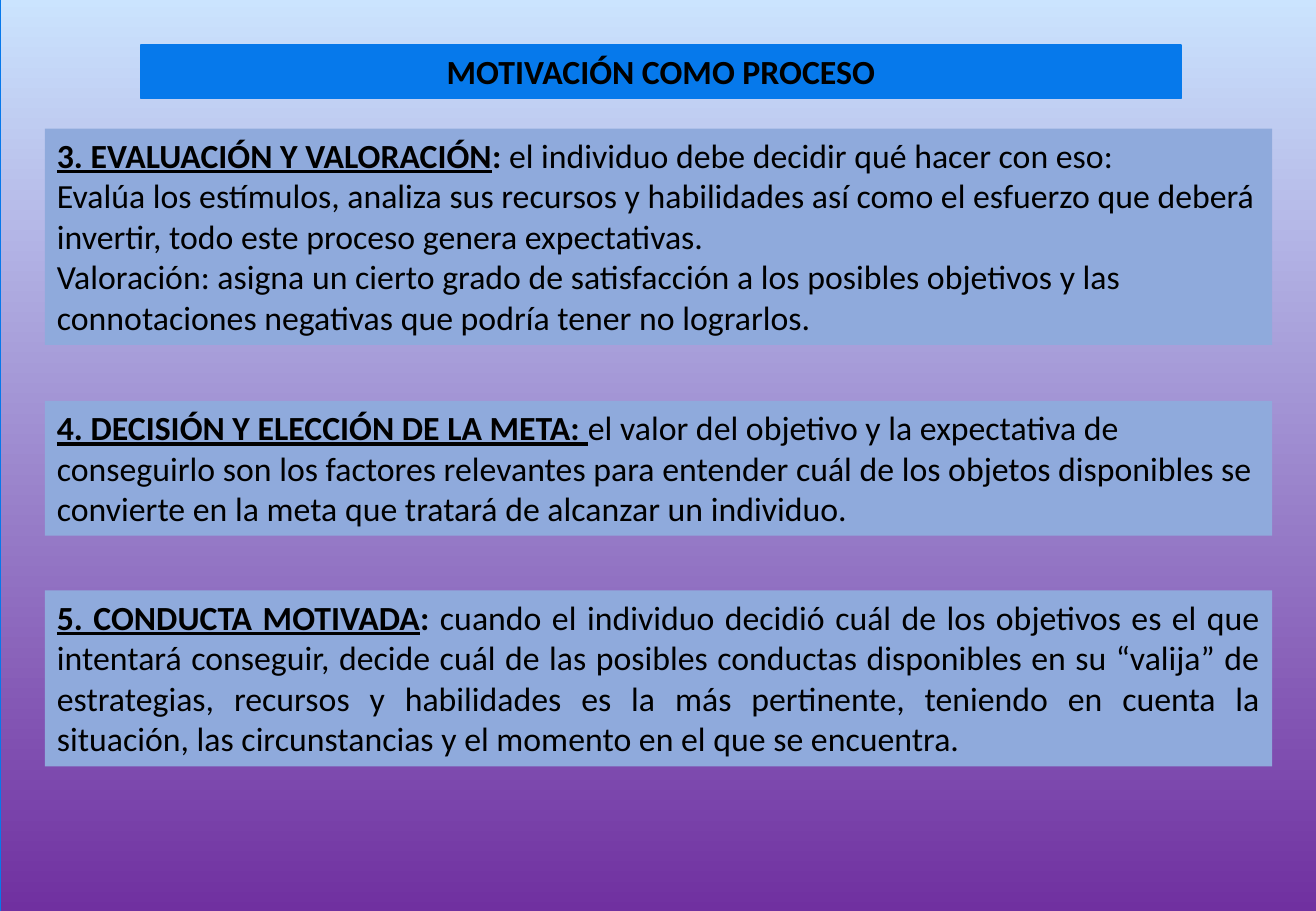
from pptx import Presentation
from pptx.dml.color import RGBColor
from pptx.enum.shapes import MSO_SHAPE
from pptx.enum.text import MSO_ANCHOR, MSO_AUTO_SIZE, PP_ALIGN
from pptx.util import Inches, Pt

RECT = MSO_SHAPE.RECTANGLE
TOP = MSO_ANCHOR.TOP
FIXED, GROW = MSO_AUTO_SIZE.NONE, MSO_AUTO_SIZE.SHAPE_TO_FIT_TEXT
LEFT, CENTER, JUSTIFY = PP_ALIGN.LEFT, PP_ALIGN.CENTER, PP_ALIGN.JUSTIFY

BLACK = RGBColor(0x00, 0x00, 0x00)
SKY = RGBColor(0xCB, 0xE4, 0xFE)
PURPLE = RGBColor(0x70, 0x30, 0xA0)
EDGE = RGBColor(0x06, 0x78, 0xEB)
BLUE = RGBColor(0x06, 0x79, 0xEB)
PANEL = RGBColor(0x8F, 0xAA, 0xDC)


def style(run, bold=False, under=False):
    font = run.font
    font.name = "Calibri"
    font.size = Pt(20)
    font.color.rgb = BLACK
    font.bold = bold
    font.underline = under


def setup(frame, size):
    frame.word_wrap = True
    frame.auto_size = size
    frame.vertical_anchor = TOP


deck = Presentation()
deck.slide_width = Inches(10.83)
deck.slide_height = Inches(7.5)
slide = deck.slides.add_slide(deck.slide_layouts[5])
slide.background.fill.solid()
slide.background.fill.fore_color.rgb = BLACK
shapes = slide.shapes

back = shapes.add_shape(RECT, Inches(0), Inches(-0.03), Inches(10.84), Inches(7.54))
back.shadow.inherit = False
back.fill.gradient()
back.fill.gradient_angle = 270
for stop, color, place in zip(back.fill.gradient_stops, (SKY, PURPLE), (0, 1)):
    stop.color.rgb = color
    stop.position = place
back.line.color.rgb = EDGE
back.line.width = Pt(0.5)

panels = [
    (1.06, 1.78, LEFT, [
        [("3. EVALUACIÓN Y VALORACIÓN", True, True), (": ", True, False),
         ("el individuo debe decidir qué hacer con eso:", False, False)],
        [("Evalúa los estímulos, analiza sus recursos y habilidades así como el "
          "esfuerzo que deberá invertir, todo este proceso genera expectativas.",
          False, False)],
        [("Valoración: asigna un cierto grado de satisfacción a los posibles "
          "objetivos y las connotaciones negativas que podría tener no lograrlos.",
          False, False)],
    ]),
    (3.3, 1.11, LEFT, [
        [("4. DECISIÓN Y ELECCIÓN DE LA META: ", True, True),
         ("el valor del objetivo y la expectativa de conseguirlo son los factores "
          "relevantes para entender cuál de los objetos disponibles se convierte "
          "en la meta que tratará de alcanzar un individuo.", False, False)],
    ]),
    (4.86, 1.45, JUSTIFY, [
        [("5. CONDUCTA MOTIVADA", True, True), (": ", True, False),
         ("cuando el individuo decidió cuál de los objetivos es el que intentará "
          "conseguir, decide cuál de las posibles conductas disponibles en su "
          "“valija” de estrategias, recursos y habilidades es la más pertinente, "
          "teniendo en cuenta la situación, las circunstancias y el momento en el "
          "que se encuentra.", False, False)],
    ]),
]

for top, height, align, paras in panels:
    box = shapes.add_textbox(Inches(0.37), Inches(top), Inches(10.1), Inches(height))
    box.fill.solid()
    box.fill.fore_color.rgb = PANEL
    frame = box.text_frame
    setup(frame, GROW)
    for i, parts in enumerate(paras):
        para = frame.paragraphs[0] if i == 0 else frame.add_paragraph()
        para.alignment = align
        for text, bold, under in parts:
            run = para.add_run()
            run.text = text
            style(run, bold, under)

title = shapes.title
shapes.element.append(title.element)
title.left, title.top = Inches(1.16), Inches(0.37)
title.width, title.height = Inches(8.56), Inches(0.44)
title.fill.solid()
title.fill.fore_color.rgb = BLUE
title.line.color.rgb = BLUE
title.line.width = Pt(0.75)
setup(title.text_frame, FIXED)
title.text_frame.text = "MOTIVACIÓN COMO PROCESO"
head = title.text_frame.paragraphs[0]
head.alignment = CENTER
style(head.runs[0], True)

deck.save("out.pptx")
